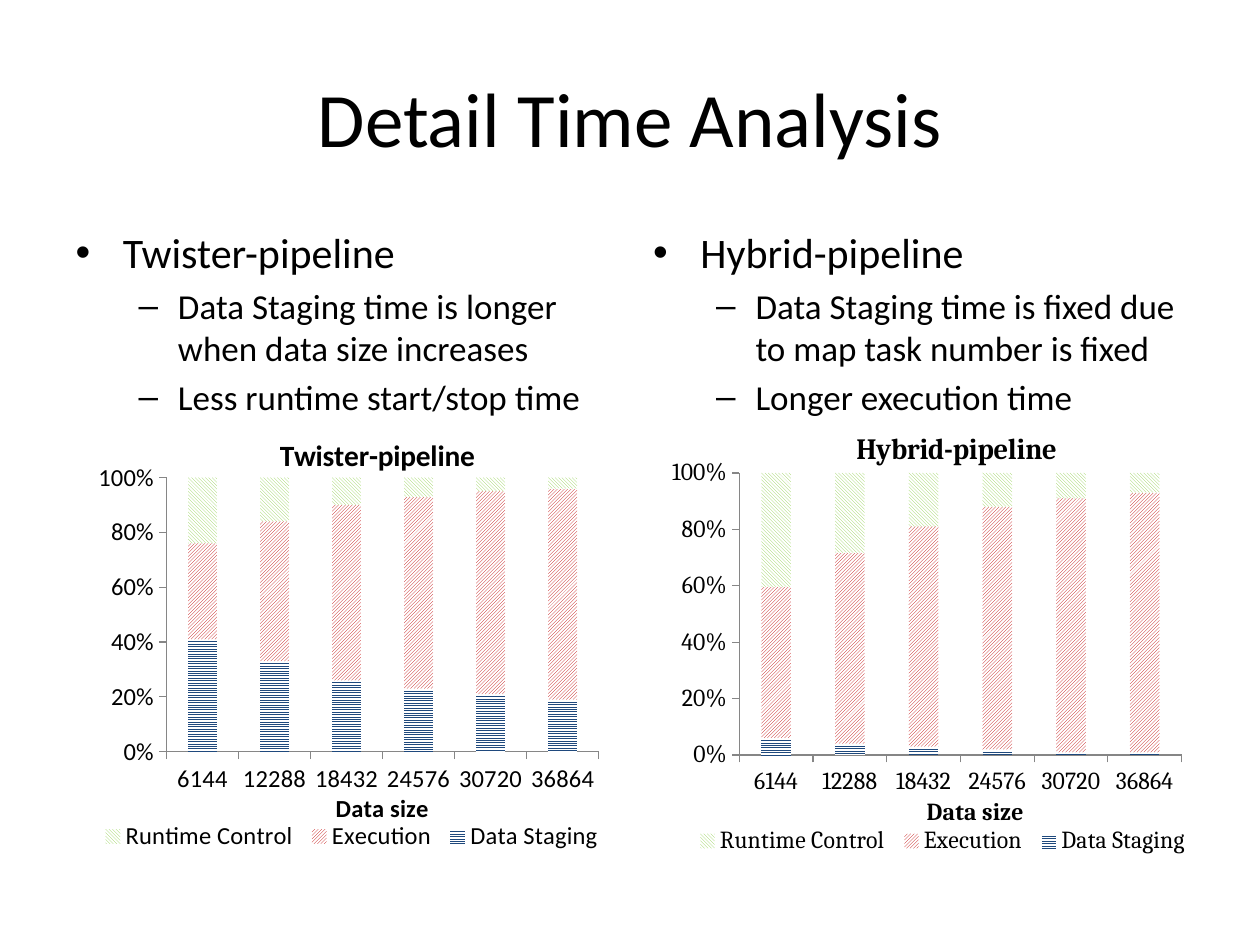
from dataclasses import dataclass

import lxml.etree
import pptx
import pptx.chart.data
import pptx.dml.color
import pptx.enum.chart
import pptx.enum.dml
import pptx.enum.text
import pptx.oxml.ns
import pptx.util

qn = pptx.oxml.ns.qn
Rgb = pptx.dml.color.RGBColor.from_string
Pat = pptx.enum.dml.MSO_PATTERN
Mark = pptx.enum.chart.XL_TICK_MARK


@dataclass
class Theme:
    sans: str = "Calibri"
    serif: str = "Cambria"
    ink: str = "000000"
    paper: str = "FFFFFF"
    rule: str = "868686"
    title: int = 44
    lists: tuple = (24, 20)
    head: float = 16.8
    note: int = 14
    fills: tuple = (
        (Pat.NARROW_HORIZONTAL, "1F497D"),
        (Pat.DARK_UPWARD_DIAGONAL, "C00000"),
        (Pat.DARK_DOWNWARD_DIAGONAL, "92D050"),
    )


class Deck:
    cols, rows = 120, 90

    def __init__(self, theme):
        self.theme = theme
        self.file = pptx.Presentation()
        self.file.slide_width = pptx.util.Inches(10)
        self.file.slide_height = pptx.util.Inches(7.5)
        self.slide = self.file.slides.add_slide(self.file.slide_layouts[3])

    def box(self, left, top, width, height):
        col = self.file.slide_width / self.cols
        row = self.file.slide_height / self.rows
        return [round(n) for n in (left * col, top * row, width * col, height * row)]

    def run(self, para, text, size, face, bold=False):
        run = para.add_run()
        run.text = text
        font = run.font
        font.size, font.name, font.bold = pptx.util.Pt(size), face, bold
        font.color.rgb = Rgb(self.theme.ink)

    def hold(self, index, area):
        shape = self.slide.placeholders[index]
        shape.left, shape.top, shape.width, shape.height = self.box(*area)
        return shape.text_frame

    def title(self, text, area):
        frame = self.hold(0, area)
        frame.vertical_anchor = pptx.enum.text.MSO_ANCHOR.MIDDLE
        para = frame.paragraphs[0]
        para.alignment = pptx.enum.text.PP_ALIGN.CENTER
        self.run(para, text, self.theme.title, self.theme.sans)

    def list(self, index, items, area):
        frame = self.hold(index, area)
        for i, (level, text) in enumerate(items):
            para = frame.add_paragraph() if i else frame.paragraphs[0]
            para.level = level
            self.run(para, text, self.theme.lists[level], self.theme.sans)

    def place(self, node, inner=False, **spots):
        for old in node.findall(qn("c:layout")):
            node.remove(old)
        first = node[0].tag if len(node) else None
        slot = 1 if first in (qn("c:tx"), qn("c:legendPos")) else 0
        layout = node.makeelement(qn("c:layout"))
        node.insert(slot, layout)
        manual = lxml.etree.SubElement(layout, qn("c:manualLayout"))
        parts = [("layoutTarget", "inner")] if inner else []
        parts += [("xMode", "edge"), ("yMode", "edge"), *spots.items()]
        for name, val in parts:
            lxml.etree.SubElement(manual, qn("c:" + name)).set("val", str(val))

    def chart(self, name, face, cats, table, area, plot, head, base, key):
        theme = self.theme
        data = pptx.chart.data.CategoryChartData()
        data.categories = cats
        for label, vals in table.items():
            data.add_series(label, vals)
        kind = pptx.enum.chart.XL_CHART_TYPE.COLUMN_STACKED_100
        chart = self.slide.shapes.add_chart(kind, *self.box(*area), data).chart
        chart.font.size, chart.font.name = pptx.util.Pt(theme.note), face
        chart.font.color.rgb = Rgb(theme.ink)

        bars = chart.plots[0]
        bars.overlap, bars.gap_width, bars.vary_by_categories = 100, 150, False
        for series, (pattern, color) in zip(bars.series, theme.fills):
            fill = series.format.fill
            fill.patterned()
            fill.pattern = pattern
            fill.fore_color.rgb = Rgb(color)
            fill.back_color.rgb = Rgb(theme.paper)

        for axis in (chart.category_axis, chart.value_axis):
            axis.has_major_gridlines = False
            axis.major_tick_mark = Mark.OUTSIDE
            axis.format.line.color.rgb = Rgb(theme.rule)
        chart.value_axis.major_unit = 0.2
        chart.value_axis.tick_labels.number_format = "0%"
        chart.value_axis.tick_labels.number_format_is_linked = False

        chart.has_title = True
        for owner, text, size in (
            (chart.chart_title, name, theme.head),
            (chart.category_axis.axis_title, "Data size", theme.note),
        ):
            self.run(owner.text_frame.paragraphs[0], text, size, face, True)

        chart.has_legend = True
        chart.legend.position = pptx.enum.chart.XL_LEGEND_POSITION.RIGHT
        chart.legend.include_in_layout = False

        root = chart.element
        spots = (
            ("c:chart/c:title", head, "xy"),
            ("c:chart/c:plotArea/c:catAx/c:title", base, "xy"),
            ("c:chart/c:legend", key, "xywh"),
            ("c:chart/c:plotArea", plot, "xywh"),
        )
        for query, vals, names in spots:
            inner = query.endswith("plotArea")
            self.place(root.xpath(query)[0], inner, **dict(zip(names, vals)))


def main():
    theme = Theme()
    deck = Deck(theme)
    deck.title("Detail Time Analysis", (6, 3.6, 108, 15))
    deck.list(1, (
        (0, "Twister-pipeline"),
        (1, "Data Staging time is longer when data size increases"),
        (1, "Less runtime start/stop time"),
    ), (6, 21, 53, 59.4))
    deck.list(2, (
        (0, "Hybrid-pipeline"),
        (1, "Data Staging time is fixed due to map task number is fixed"),
        (1, "Longer execution time"),
    ), (61, 21, 53, 59.4))

    cats = [str(6144 * n) for n in range(1, 7)]
    deck.chart(
        "Twister-pipeline", theme.sans, cats,
        {
            "Data Staging": (41, 33, 26, 23, 21, 19),
            "Execution": (35, 51, 64, 70, 74, 77),
            "Runtime Control": (24, 16, 10, 7, 5, 4),
        },
        area=(9, 41, 49, 40.8), plot=(0.14, 0.11, 0.84, 0.64),
        head=(0.35, 0), base=(0.46, 0.83), key=(0, 0.91, 1, 0.09),
    )
    deck.chart(
        "Hybrid-pipeline", theme.serif, cats,
        {
            "Data Staging": (6, 4, 3, 2, 1, 1),
            "Execution": (53, 67, 78, 86, 90, 92),
            "Runtime Control": (40, 28, 19, 12, 9, 7),
        },
        area=(64, 40, 50, 42), plot=(0.1, 0.12, 0.87, 0.64),
        head=(0.32, 0.01), base=(0.46, 0.84), key=(0, 0.91, 1, 0.09),
    )
    deck.file.save("out.pptx")


if __name__ == "__main__":
    main()
